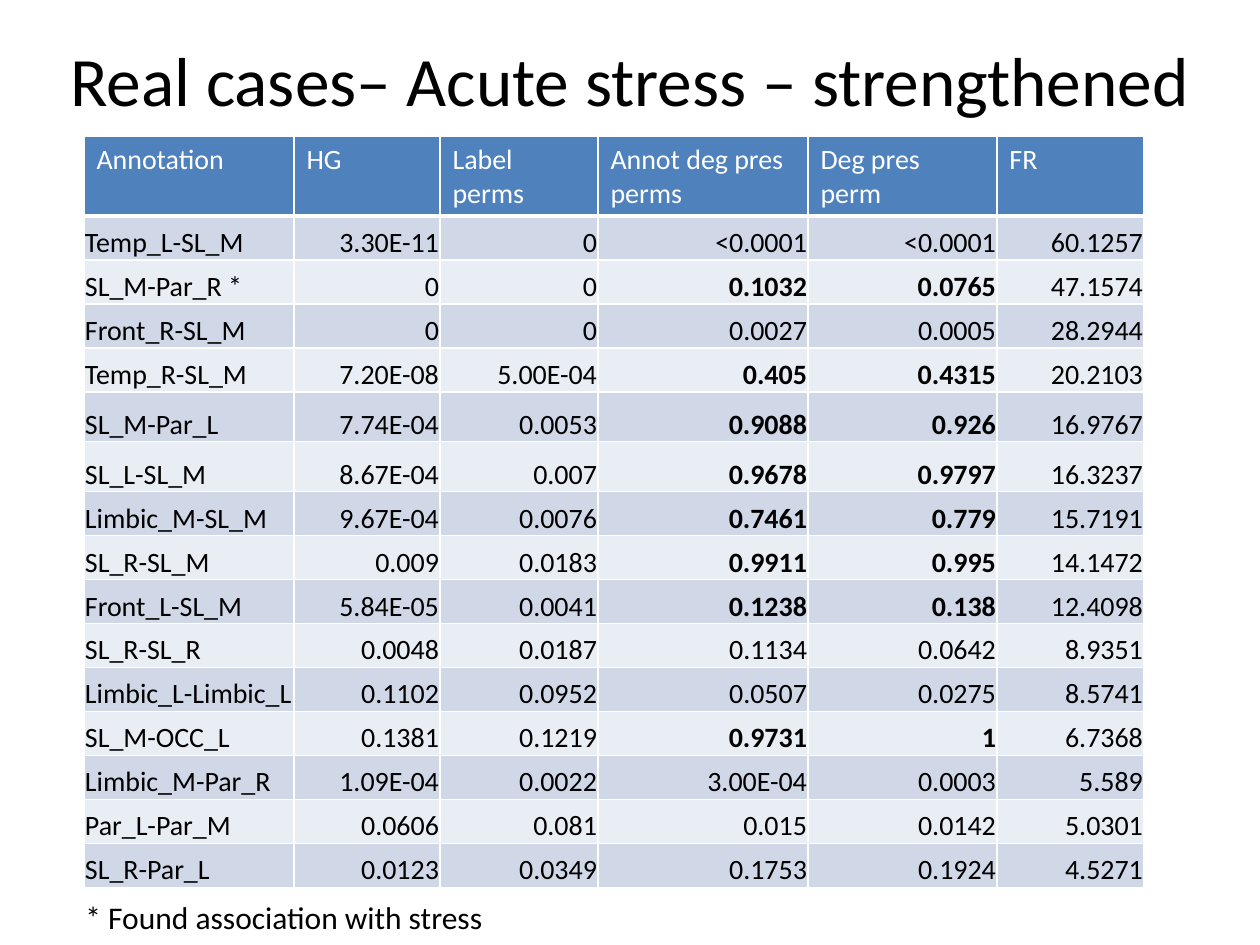
import pptx
import pptx.dml.color
import pptx.enum.text
import pptx.oxml
import pptx.oxml.ns
import pptx.util
from lxml import etree

PX = 914400 // 126
FONT = "Calibri"
COLORS = {"text": "000000", "header": "4F81BD", "odd": "D0D8E8",
          "even": "E9EDF4", "white": "FFFFFF"}
ALIGN = pptx.enum.text.PP_ALIGN
ANCHOR = pptx.enum.text.MSO_ANCHOR

TITLE = "Real cases– Acute stress – strengthened"
FOOTNOTE = "* Found association with stress"
HEADERS = ["Annotation", "HG", "Label perms", "Annot deg pres perms", "Deg pres perm", "FR"]
ROWS = [
    ("Temp_L-SL_M", "3.30E-11", "0", "<0.0001", "<0.0001", "60.1257"),
    ("SL_M-Par_R *", "0", "0", "0.1032", "0.0765", "47.1574"),
    ("Front_R-SL_M", "0", "0", "0.0027", "0.0005", "28.2944"),
    ("Temp_R-SL_M", "7.20E-08", "5.00E-04", "0.405", "0.4315", "20.2103"),
    ("SL_M-Par_L", "7.74E-04", "0.0053", "0.9088", "0.926", "16.9767"),
    ("SL_L-SL_M", "8.67E-04", "0.007", "0.9678", "0.9797", "16.3237"),
    ("Limbic_M-SL_M", "9.67E-04", "0.0076", "0.7461", "0.779", "15.7191"),
    ("SL_R-SL_M", "0.009", "0.0183", "0.9911", "0.995", "14.1472"),
    ("Front_L-SL_M", "5.84E-05", "0.0041", "0.1238", "0.138", "12.4098"),
    ("SL_R-SL_R", "0.0048", "0.0187", "0.1134", "0.0642", "8.9351"),
    ("Limbic_L-Limbic_L", "0.1102", "0.0952", "0.0507", "0.0275", "8.5741"),
    ("SL_M-OCC_L", "0.1381", "0.1219", "0.9731", "1", "6.7368"),
    ("Limbic_M-Par_R", "1.09E-04", "0.0022", "3.00E-04", "0.0003", "5.589"),
    ("Par_L-Par_M", "0.0606", "0.081", "0.015", "0.0142", "5.0301"),
    ("SL_R-Par_L", "0.0123", "0.0349", "0.1753", "0.1924", "4.5271"),
]
BOLD_ROWS = {2, 4, 5, 6, 7, 8, 9, 12}
BOLD_COLUMNS = {3, 4}
TALL_ROWS = {5, 6}
COLUMN_WIDTHS = [210, 146, 158, 210, 189, 147]
HEADER_HEIGHT, ROW_HEIGHT, TALL_HEIGHT = 80, 44, 50


def rgb(name):
    return pptx.dml.color.RGBColor.from_string(COLORS[name])


def write(frame, text, size, color="text", bold=False, align=ALIGN.LEFT):
    para = frame.paragraphs[0]
    para.alignment = align
    span = para.add_run()
    span.text = text
    span.font.name = FONT
    span.font.size = pptx.util.Pt(size)
    span.font.bold = bold
    span.font.color.rgb = rgb(color)


def add_text(page, place, text, size, align=ALIGN.LEFT, anchor=ANCHOR.TOP):
    box = page.shapes.add_textbox(*(value * PX for value in place))
    box.text_frame.word_wrap = True
    box.text_frame.vertical_anchor = anchor
    write(box.text_frame, text, size, align=align)


def set_borders(cell, bottom):
    """White cell lines, 1 pt wide except for the bottom one."""
    properties = cell._tc.get_or_add_tcPr()
    for side, width in (("lnL", 1), ("lnR", 1), ("lnT", 1), ("lnB", bottom)):
        line = etree.SubElement(properties, pptx.oxml.ns.qn("a:" + side),
                                w=str(pptx.util.Pt(width)))
        fill = etree.SubElement(line, pptx.oxml.ns.qn("a:solidFill"))
        etree.SubElement(fill, pptx.oxml.ns.qn("a:srgbClr"), val=COLORS["white"])


def paint(cell, color, bottom=1):
    set_borders(cell, bottom)
    cell.fill.solid()
    cell.fill.fore_color.rgb = rgb(color)


def add_results(page, left, top):
    heights = [HEADER_HEIGHT] + [TALL_HEIGHT if row in TALL_ROWS else ROW_HEIGHT
                                 for row in range(1, len(ROWS) + 1)]
    table = page.shapes.add_table(len(heights), len(HEADERS), left * PX, top * PX,
                                  sum(COLUMN_WIDTHS) * PX, sum(heights) * PX).table
    for column, width in zip(table.columns, COLUMN_WIDTHS):
        column.width = width * PX
    for row, height in zip(table.rows, heights):
        row.height = height * PX

    for column, label in enumerate(HEADERS):
        cell = table.cell(0, column)
        paint(cell, "header", bottom=3)
        write(cell.text_frame, label, 16, "white")

    for row, values in enumerate(ROWS, 1):
        for column, value in enumerate(values):
            cell = table.cell(row, column)
            paint(cell, "odd" if row % 2 else "even")
            cell.margin_left = cell.margin_right = cell.margin_top = PX
            cell.margin_bottom = 0
            cell.vertical_anchor = ANCHOR.BOTTOM
            write(cell.text_frame, value, 16,
                  bold=row in BOLD_ROWS and column in BOLD_COLUMNS,
                  align=ALIGN.RIGHT if column else ALIGN.LEFT)


def main():
    deck = pptx.Presentation()
    deck.slide_width, deck.slide_height = 1260 * PX, 945 * PX
    page = deck.slides.add_slide(deck.slide_layouts[6])
    add_text(page, (42, 0, 1176, 158), TITLE, 39.6, ALIGN.CENTER, ANCHOR.MIDDLE)
    add_results(page, 84, 136)
    add_text(page, (73, 892, 599, 50), FOOTNOTE, 18)
    deck.save("out.pptx")


if __name__ == "__main__":
    main()
